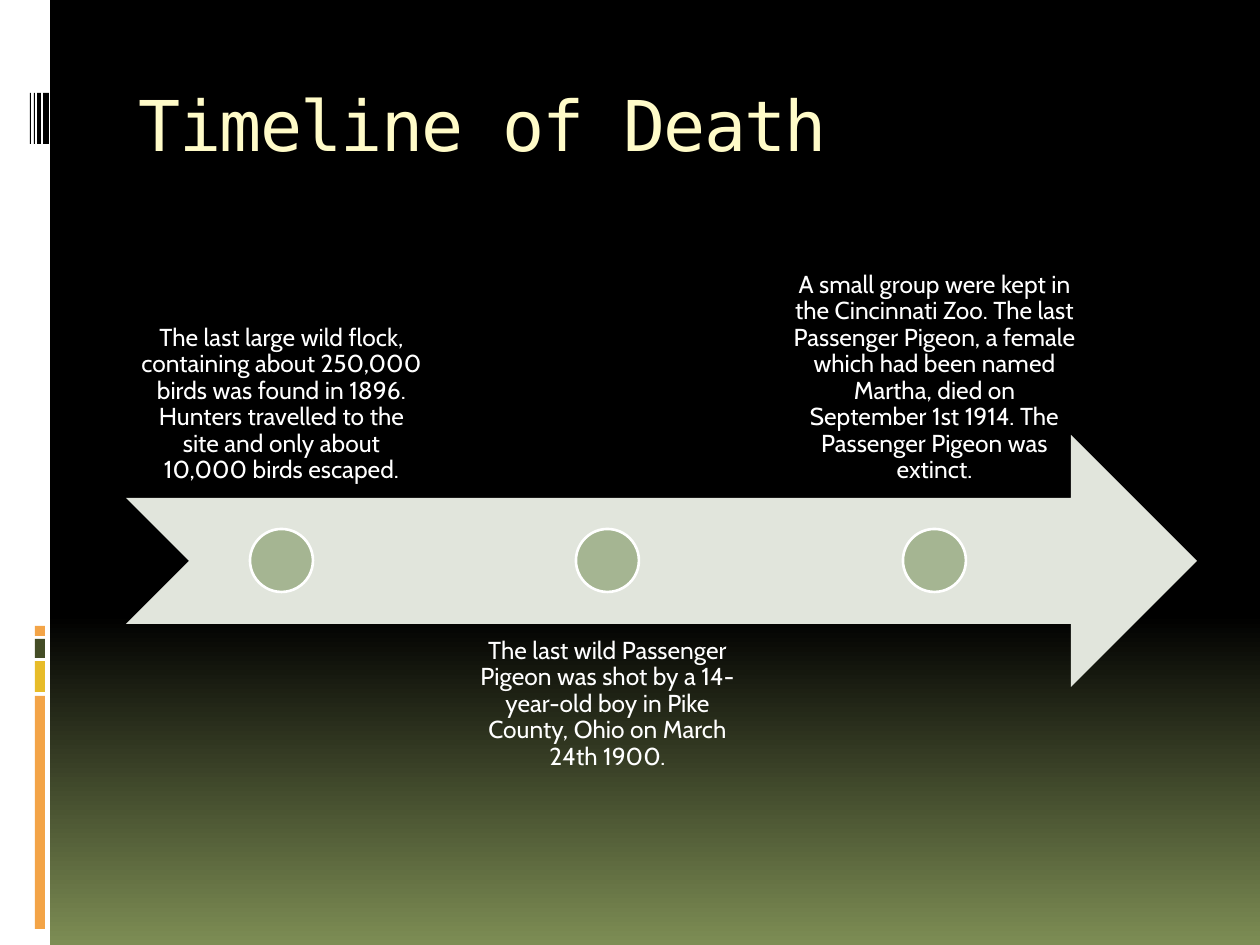
from dataclasses import dataclass

from pptx import Presentation
from pptx import util as u
from pptx.dml.color import RGBColor
from pptx.enum import shapes, text

PX = 914400 / 126


@dataclass(frozen=True)
class Theme:
    black: str = "000000"
    white: str = "FFFFFF"
    moss: str = "7D8D54"
    orange: str = "F3A447"
    gold: str = "E7BC29"
    olive: str = "444D26"
    cream: str = "FFFBC8"
    arrow: str = "E1E5DC"
    dot: str = "A5B592"
    title_font: str = "DejaVu Sans Mono"
    body_font: str = "Cabin"
    title_size: int = 40
    body_size: int = 14


THEME = Theme()
ACCENT_BARS = [
    (696, 233, THEME.orange),
    (661, 31, THEME.gold),
    (639, 19, THEME.olive),
    (626, 10, THEME.orange),
]
BARCODE = [(43, 6), (37, 4), (34, 1), (30, 1)]
EVENTS = [
    "The last large wild flock, containing about 250,000 birds was found in 1896. "
    "Hunters travelled to the site and only about 10,000 birds escaped.",
    "The last wild Passenger Pigeon was shot by a 14-year-old boy in Pike County, "
    "Ohio on March 24th 1900.",
    "A small group were kept in the Cincinnati Zoo. The last Passenger Pigeon, a female "
    "which had been named Martha, died on September 1st 1914. "
    "The Passenger Pigeon was extinct.",
]


def px(n):
    """Turn pixels into EMU."""
    return u.Emu(round(n * PX))


def rgb(value):
    """Turn a hex string into a colour."""
    return RGBColor.from_string(value)


def set_all(obj, values):
    """Set each attribute named in values on obj."""
    for name, value in values.items():
        setattr(obj, name, value)


def add_background(s):
    """Fill the slide with black fading to moss at the bottom."""
    fill = s.background.fill
    fill.gradient()
    fill.gradient_angle = 270
    for stop, position, color in zip(fill.gradient_stops, (0.65, 1), (THEME.black, THEME.moss)):
        stop.position = position
        stop.color.rgb = rgb(color)


def add_block(s, kind, box, color, outline=None):
    """Add a filled preset shape with an optional outline."""
    sp = s.shapes.add_shape(kind, *map(px, box))
    sp.shadow.inherit = False
    sp.fill.solid()
    sp.fill.fore_color.rgb = rgb(color)
    if outline:
        sp.line.color.rgb = rgb(outline)
        sp.line.width = u.Pt(1.5)
    else:
        sp.line.fill.background()


def add_text(s, box, words, frame, paragraph, font, color):
    """Add a wrapped text box holding one run and return the run."""
    tf = s.shapes.add_textbox(*map(px, box)).text_frame
    set_all(tf, {"word_wrap": True, **frame})
    p = tf.paragraphs[0]
    set_all(p, paragraph)
    r = p.add_run()
    r.text = words
    set_all(r.font, font)
    r.font.color.rgb = rgb(color)
    return r


def add_sidebar(s):
    """Add the white edge with its accent bars and barcode."""
    rect = shapes.MSO_SHAPE.RECTANGLE
    add_block(s, rect, (0, 0, 50, 945), THEME.white)
    for top, height, color in ACCENT_BARS:
        add_block(s, rect, (35, top, 10, height), color)
    for left, width in BARCODE:
        add_block(s, rect, (left, 93, width, 51), THEME.black)


def add_title(s, words):
    """Add the slightly tightened slide title."""
    frame = {"margin_left": px(13), "margin_top": px(11)}
    font = {"name": THEME.title_font, "size": u.Pt(THEME.title_size)}
    r = add_text(s, (126, 71, 1071, 126), words, frame, {}, font, THEME.cream)
    r.font._element.set("spc", "-100")


def add_event(s, index, words):
    """Add one event, alternately above and below the arrow, with its dot."""
    left, width, dot = 126 + index * 653 // 2, 311, 63
    below = index % 2
    anchor = text.MSO_ANCHOR.TOP if below else text.MSO_ANCHOR.BOTTOM
    sides = ("left", "top", "right", "bottom")
    frame = {"vertical_anchor": anchor, **{f"margin_{side}": px(14) for side in sides}}
    paragraph = {"alignment": text.PP_ALIGN.CENTER, "line_spacing": 0.9}
    font = {"name": THEME.body_font, "size": u.Pt(THEME.body_size)}
    box = (left, 624 if below else 246, width, 252)
    add_text(s, box, words, frame, paragraph, font, THEME.white)
    dot_box = (left + (width - dot) // 2, 529, dot, dot)
    add_block(s, shapes.MSO_SHAPE.OVAL, dot_box, THEME.dot, THEME.white)


def main():
    """Build and save the timeline slide."""
    prs = Presentation()
    set_all(prs, {"slide_width": px(1260), "slide_height": px(945)})
    s = prs.slides.add_slide(prs.slide_layouts[6])
    add_background(s)
    add_sidebar(s)
    add_title(s, "Timeline of Death")
    add_block(s, shapes.MSO_SHAPE.NOTCHED_RIGHT_ARROW, (126, 435, 1071, 252), THEME.arrow)
    for index, words in enumerate(EVENTS):
        add_event(s, index, words)
    prs.save("out.pptx")


if __name__ == "__main__":
    main()
